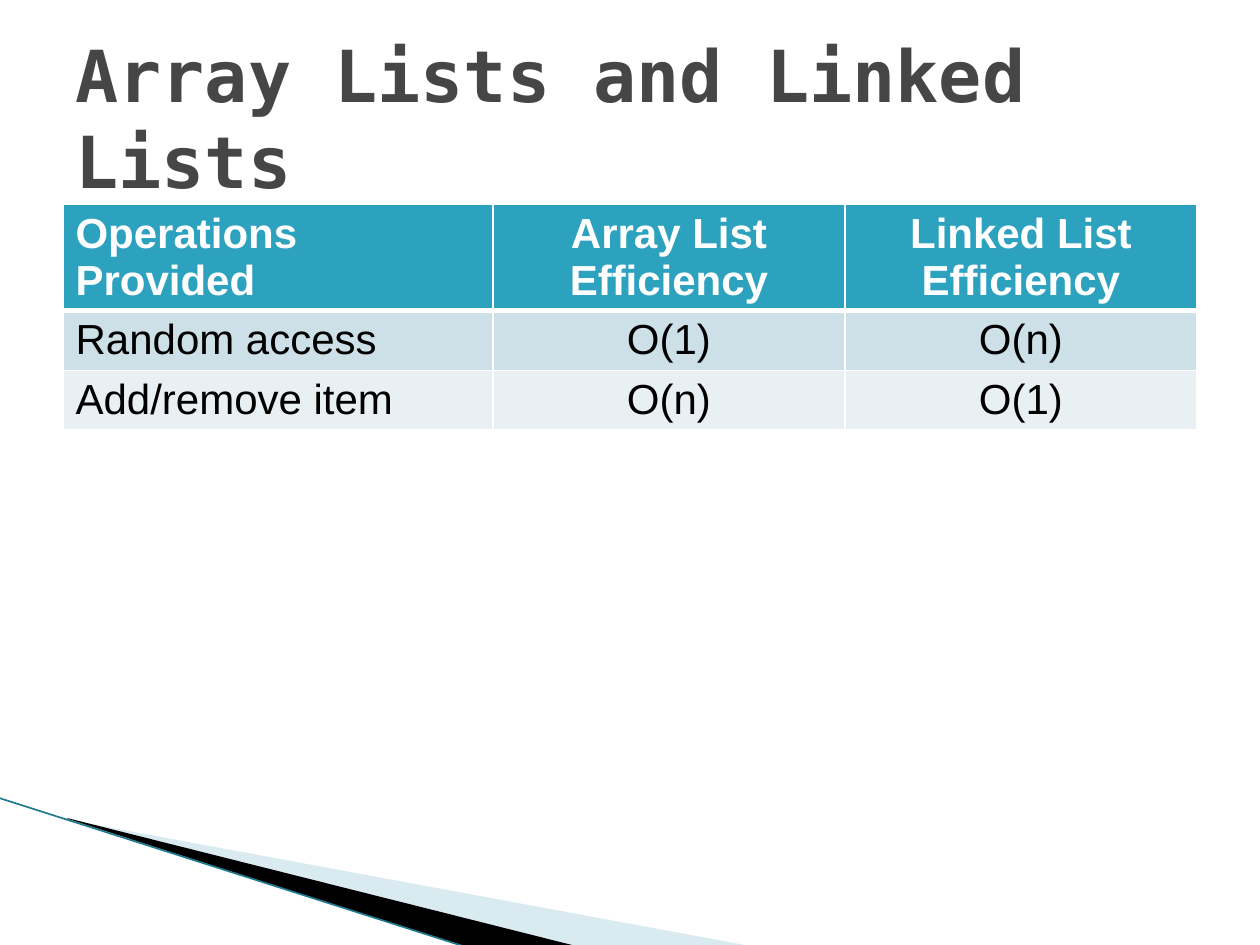
from typing import NamedTuple

from lxml.etree import SubElement
from pptx import Presentation
from pptx.dml.color import RGBColor
from pptx.enum.shapes import MSO_CONNECTOR
from pptx.enum.text import MSO_ANCHOR, PP_ALIGN
from pptx.oxml.ns import qn
from pptx.util import Emu, Pt

EMU_PER_PX = 914400 / 126

WHITE = RGBColor(0xFF, 0xFF, 0xFF)
BLACK = RGBColor(0x00, 0x00, 0x00)
TITLE_GRAY = RGBColor(0x46, 0x46, 0x46)
HEADER_TEAL = RGBColor(0x2D, 0xA2, 0xBF)
BAND_DARK = RGBColor(0xCD, 0xE0, 0xE8)
BAND_LIGHT = RGBColor(0xE8, 0xF0, 0xF4)
WEDGE_BLUE = RGBColor(0xA0, 0xCB, 0xDC)
EDGE_TEAL = RGBColor(0x1F, 0x7A, 0x8F)


class Wedge(NamedTuple):
    points: list[tuple[int, int]]
    color: RGBColor
    opacity: int = 100


class Row(NamedTuple):
    texts: tuple[str, str, str]
    height: int
    fill: RGBColor
    color: RGBColor = BLACK
    bold: bool = False
    top_border: int = 1
    bottom_border: int = 1


WEDGES = [
    Wedge([(69, 820), (750, 946), (575, 946), (69, 819)], WEDGE_BLUE, 40),
    Wedge([(67, 818), (576, 946), (469, 948), (68, 819)], BLACK),
]
COLUMN_WIDTHS = [430, 352, 352]
ROWS = [
    Row(("Operations Provided", "Array List Efficiency", "Linked List Efficiency"),
        106, HEADER_TEAL, WHITE, bold=True, bottom_border=3),
    Row(("Random access", "O(1)", "O(n)"), 60, BAND_DARK, top_border=3),
    Row(("Add/remove item", "O(n)", "O(1)"), 60, BAND_LIGHT),
]


def px(length: int) -> Emu:
    return Emu(round(length * EMU_PER_PX))


def write_text(frame, text: str, *, font: str, size: int, color: RGBColor,
               bold: bool = False, align=PP_ALIGN.LEFT) -> None:
    frame.word_wrap = True
    paragraph = frame.paragraphs[0]
    paragraph.alignment = align
    run = paragraph.add_run()
    run.text = text
    run.font.name = font
    run.font.size = Pt(size)
    run.font.bold = bold
    run.font.color.rgb = color


def draw_wedge(slide, wedge: Wedge) -> None:
    start, *others = wedge.points
    builder = slide.shapes.build_freeform(*start, scale=EMU_PER_PX)
    builder.add_line_segments(others, close=True)
    shape = builder.convert_to_shape()
    shape.shadow.inherit = False
    shape.line.fill.background()
    shape.fill.solid()
    shape.fill.fore_color.rgb = wedge.color
    if wedge.opacity < 100:
        color = shape.fill._xPr.find(qn("a:solidFill"))[0]
        SubElement(color, qn("a:alpha"), val=str(wedge.opacity * 1000))


def draw_edge(slide) -> None:
    edge = slide.shapes.add_connector(
        MSO_CONNECTOR.STRAIGHT, px(-1), px(798), px(469), px(948))
    edge.line.color.rgb = EDGE_TEAL
    edge.line.width = Pt(0.95)
    SubElement(edge._element.spPr, qn("a:effectLst"))


def set_borders(cell, row: Row) -> None:
    properties = cell._tc.get_or_add_tcPr()
    widths = {"L": 1, "R": 1, "T": row.top_border, "B": row.bottom_border}
    for side, width in widths.items():
        border = SubElement(properties, qn(f"a:ln{side}"), w=str(Pt(width)))
        fill = SubElement(border, qn("a:solidFill"))
        SubElement(fill, qn("a:srgbClr"), val=str(WHITE))


def draw_table(slide) -> None:
    table = slide.shapes.add_table(
        len(ROWS), len(COLUMN_WIDTHS), px(63), px(204),
        px(sum(COLUMN_WIDTHS)), px(sum(row.height for row in ROWS))).table
    table.horz_banding = False
    for column, width in zip(table.columns, COLUMN_WIDTHS):
        column.width = px(width)
    for r, row in enumerate(ROWS):
        table.rows[r].height = px(row.height)
        for c, text in enumerate(row.texts):
            cell = table.cell(r, c)
            set_borders(cell, row)
            cell.fill.solid()
            cell.fill.fore_color.rgb = row.fill
            write_text(cell.text_frame, text, font="Arial", size=24,
                       color=row.color, bold=row.bold,
                       align=PP_ALIGN.CENTER if c else PP_ALIGN.LEFT)


def draw_title(slide) -> None:
    title = slide.shapes.add_textbox(px(63), px(38), px(1134), px(158))
    title.text_frame.vertical_anchor = MSO_ANCHOR.MIDDLE
    write_text(title.text_frame, "Array Lists and Linked Lists",
               font="DejaVu Sans Mono", size=41, color=TITLE_GRAY, bold=True)


def main() -> None:
    presentation = Presentation()
    presentation.slide_width = px(1260)
    presentation.slide_height = px(945)
    slide = presentation.slides.add_slide(presentation.slide_layouts[6])

    # Corner decoration
    for wedge in WEDGES:
        draw_wedge(slide, wedge)
    draw_edge(slide)

    # Efficiency comparison
    draw_table(slide)
    draw_title(slide)

    presentation.save("out.pptx")


if __name__ == "__main__":
    main()
